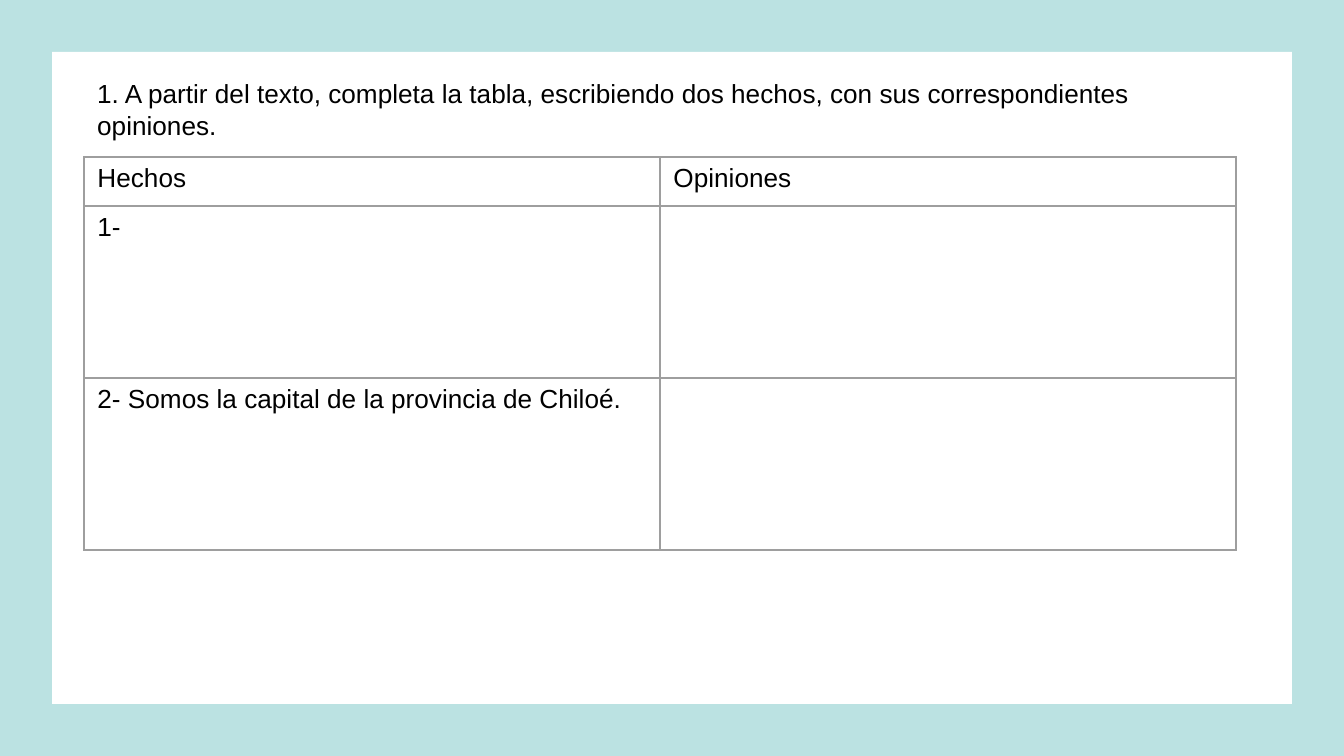
"""Build a worksheet slide with a table for facts and opinions."""
from lxml import etree
from pptx import Presentation
from pptx.dml.color import RGBColor
from pptx.enum.shapes import MSO_SHAPE
from pptx.enum.text import MSO_AUTO_SIZE, PP_ALIGN
from pptx.oxml.ns import qn
from pptx.util import Pt

RECTANGLE = MSO_SHAPE.RECTANGLE
FIT_SHAPE = MSO_AUTO_SIZE.SHAPE_TO_FIT_TEXT
LEFT = PP_ALIGN.LEFT

AQUA = RGBColor(0xBB, 0xE2, 0xE2)
WHITE = RGBColor(0xFF, 0xFF, 0xFF)
BLACK = RGBColor(0x00, 0x00, 0x00)
GRAY = RGBColor(0x9E, 0x9E, 0x9E)


def px(length):
    return round(length * 914400 / 134.4)


def write(text_frame, text, size=14, font="Arial", color=BLACK, align=LEFT):
    paragraph = text_frame.paragraphs[0]
    paragraph.alignment = align
    run = paragraph.add_run()
    run.text = text
    run.font.size = Pt(size)
    run.font.name = font
    run.font.color.rgb = color


presentation = Presentation()
presentation.slide_width = px(1344)
presentation.slide_height = px(756)
slide = presentation.slides.add_slide(presentation.slide_layouts[6])
slide.background.fill.solid()
slide.background.fill.fore_color.rgb = AQUA

panel = slide.shapes.add_shape(RECTANGLE, px(52), px(52), px(1240), px(652))
panel.shadow.inherit = False
panel.fill.solid()
panel.fill.fore_color.rgb = WHITE
panel.line.fill.background()

instruction = slide.shapes.add_textbox(px(84), px(71), px(1133), px(76))
instruction.text_frame.word_wrap = True
instruction.text_frame.auto_size = FIT_SHAPE
write(
    instruction.text_frame,
    "1. A partir del texto, completa la tabla, escribiendo dos hechos, "
    "con sus correspondientes opiniones.",
)

ROWS = [
    (49, ["Hechos", "Opiniones"]),
    (172, ["1-", ""]),
    (172, ["2- Somos la capital de la provincia de Chiloé.", ""]),
]
table_height = sum(height for height, texts in ROWS)
table = slide.shapes.add_table(
    len(ROWS), 2, px(84), px(157), px(1152), px(table_height)
).table
table.first_row = False
table.horz_banding = False

for row_index, (height, texts) in enumerate(ROWS):
    table.rows[row_index].height = px(height)
    for column_index, text in enumerate(texts):
        cell = table.cell(row_index, column_index)
        cell.fill.background()
        if text:
            write(cell.text_frame, text)
        properties = cell._tc.get_or_add_tcPr()
        for position, side in enumerate(("lnL", "lnR", "lnT", "lnB")):
            border = etree.Element(qn(f"a:{side}"), w=str(Pt(0.75)))
            fill = etree.SubElement(border, qn("a:solidFill"))
            etree.SubElement(fill, qn("a:srgbClr"), val=str(GRAY))
            properties.insert(position, border)

presentation.save("out.pptx")
